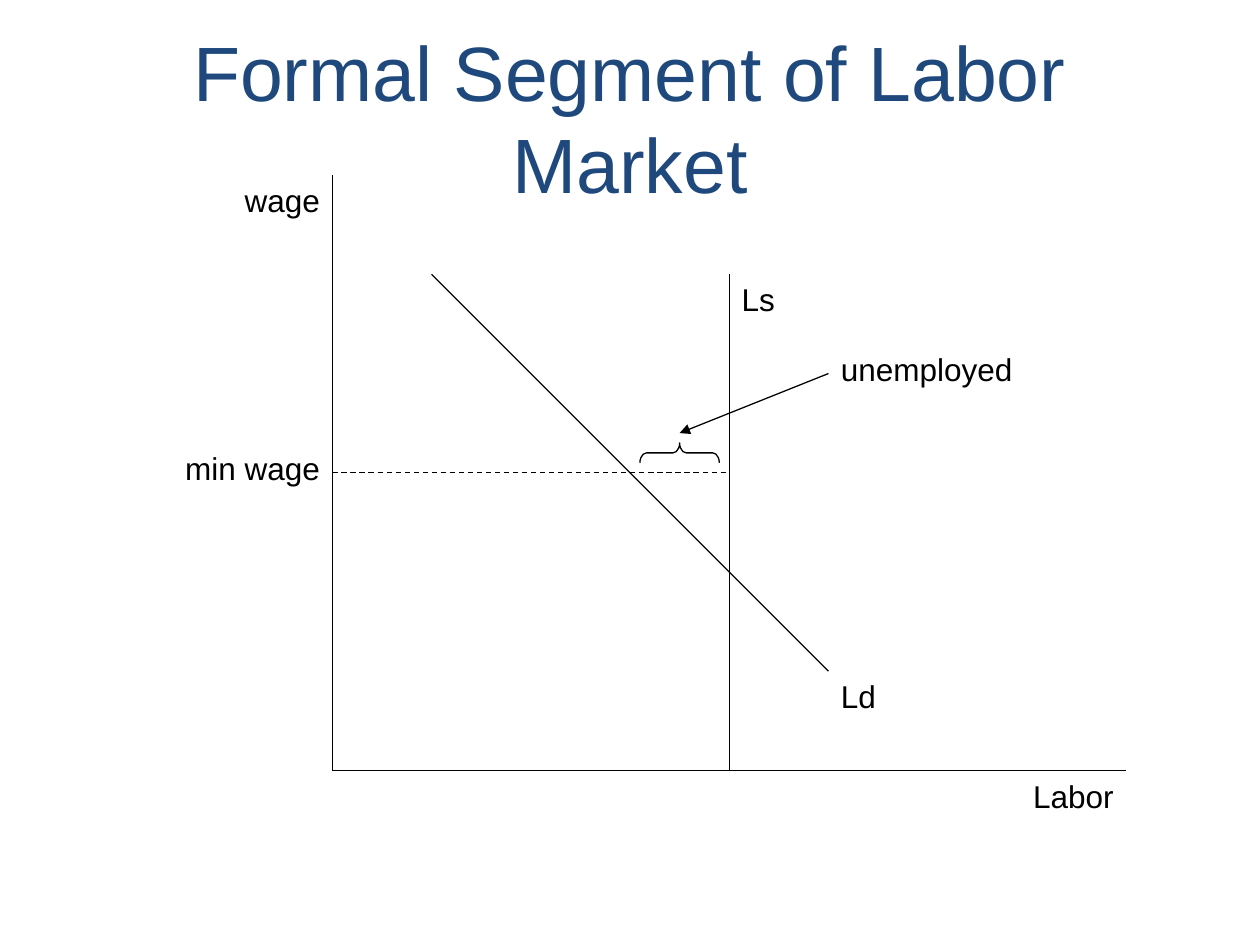
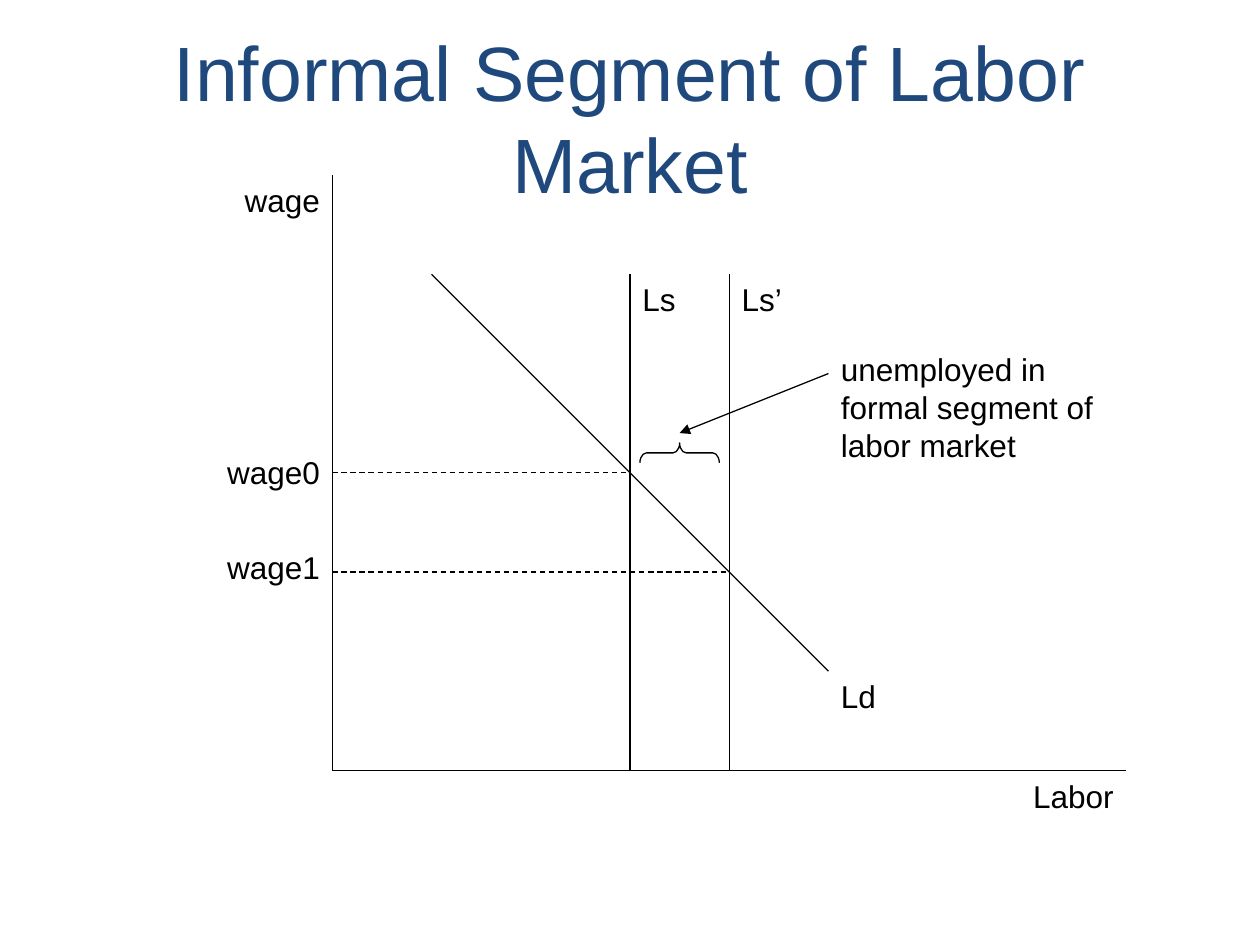
from lxml import etree
from pptx import Presentation
from pptx.dml.color import RGBColor
from pptx.enum.dml import MSO_LINE
from pptx.enum.shapes import MSO_CONNECTOR, MSO_SHAPE
from pptx.enum.text import MSO_ANCHOR, MSO_AUTO_SIZE, PP_ALIGN
from pptx.oxml.ns import qn
from pptx.util import Cm, Pt

LEFT, MID, RIGHT = PP_ALIGN.LEFT, PP_ALIGN.CENTER, PP_ALIGN.RIGHT
CENTRED = MSO_ANCHOR.MIDDLE
FIXED, GROW = MSO_AUTO_SIZE.NONE, MSO_AUTO_SIZE.SHAPE_TO_FIT_TEXT
DASH, STRAIGHT = MSO_LINE.DASH, MSO_CONNECTOR.STRAIGHT
BRACE = MSO_SHAPE.LEFT_BRACE

# Axis origin and length of one chart unit, in cm
ORIGIN_X, ORIGIN_Y, UNIT = 6.7, 15.53, 2


def color(code):
    return RGBColor.from_string(code)


def assign(target, values):
    for name, value in values.items():
        setattr(target, name, value)


class Deck:
    face = "Arial"
    ink = "000000"
    accent = "1F497D"
    stroke = 0.75

    def __init__(self):
        self.prs = Presentation()
        assign(self.prs, {"slide_width": Cm(25.4), "slide_height": Cm(19.05)})
        self.slide = None

    def spot(self, labor, wage):
        """Turn chart units into a place on the slide."""
        return Cm(ORIGIN_X + UNIT * labor), Cm(ORIGIN_Y - UNIT * wage)

    def letter(self, shape, text, size, code, align, frame):
        assign(shape.text_frame, {"word_wrap": True, **frame})
        par = shape.text_frame.paragraphs[0]
        par.alignment = align
        run = par.add_run()
        run.text = text
        assign(run.font, {"name": self.face, "size": Pt(size)})
        run.font.color.rgb = color(code)

    def start(self, title):
        self.slide = self.prs.slides.add_slide(self.prs.slide_layouts[5])
        head = self.slide.shapes.title
        assign(head, {"left": Cm(1.27), "top": Cm(0.76),
                      "width": Cm(22.86), "height": Cm(3.18)})
        self.letter(head, title, 44, self.accent, MID,
                    {"vertical_anchor": CENTRED, "auto_size": FIXED})

    def pen(self, shape):
        shape.line.color.rgb = color(self.ink)
        shape.line.width = Pt(self.stroke)

    def line(self, start, end, dash=None, arrow=False):
        link = self.slide.shapes.add_connector(
            STRAIGHT, *self.spot(*start), *self.spot(*end))
        self.pen(link)
        if dash:
            link.line.dash_style = dash
        props = link.element.spPr
        if arrow:
            tip = etree.SubElement(props.find(qn("a:ln")), qn("a:tailEnd"))
            tip.set("type", "triangle")
        etree.SubElement(props, qn("a:effectLst"))

    def label(self, text, labor, wage, width, align=LEFT, rows=1):
        """Place a label by its top corner on the side it aligns to."""
        x, y = self.spot(labor, wage)
        if align == RIGHT:
            x -= Cm(width)
        box = self.slide.shapes.add_textbox(
            x, y, Cm(width), Cm(0.24 + 0.78 * rows))
        self.letter(box, text, 18, self.ink, align, {"auto_size": GROW})

    def brace(self, labor, wage, wide=0.4, tall=1.6):
        x, y = self.spot(labor, wage)
        mark = self.slide.shapes.add_shape(
            BRACE, x - Cm(wide / 2), y - Cm(tall / 2), Cm(wide), Cm(tall))
        mark.rotation = 90
        mark.adjustments[0] = 0.33
        mark.shadow.inherit = False
        mark.fill.background()
        self.pen(mark)

    def market(self, title, supply, levels, note, rows=1):
        self.start(title)
        # Axes and demand
        self.line((0, 6), (0, 0))
        self.line((0, 0), (8, 0))
        self.line((1, 5), (5, 1))
        self.label("Labor", 8, 0, 6, RIGHT)
        self.label("wage", 0, 6, 4, RIGHT)
        self.label("Ld", 5, 1, 4)
        # Supply lines
        for name, labor, width in supply:
            self.line((labor, 5), (labor, 0))
            self.label(name, labor, 5, width)
        # Wage levels
        for name, wage, top, reach in levels:
            self.line((0, wage), (reach, wage), DASH)
            self.label(name, 0, top, 4.4, RIGHT)
        # Unemployed group
        self.brace(3.5, 3.2)
        self.label(note, 5, 4.3, 6, rows=rows)
        self.line((5, 4), (3.5, 3.4), arrow=True)


def main():
    deck = Deck()
    deck.market("Formal Segment of Labor Market",
                [("Ls", 4, 8)],
                [("min wage", 3, 3.3, 4)],
                "unemployed")
    deck.market("Informal Segment of Labor Market",
                [("Ls", 3, 2), ("Ls’", 4, 2)],
                [("wage0", 3, 3.26, 3), ("wage1", 2, 2.3, 4)],
                "unemployed in formal segment of labor market", rows=3)
    deck.prs.save("out.pptx")


if __name__ == "__main__":
    main()
